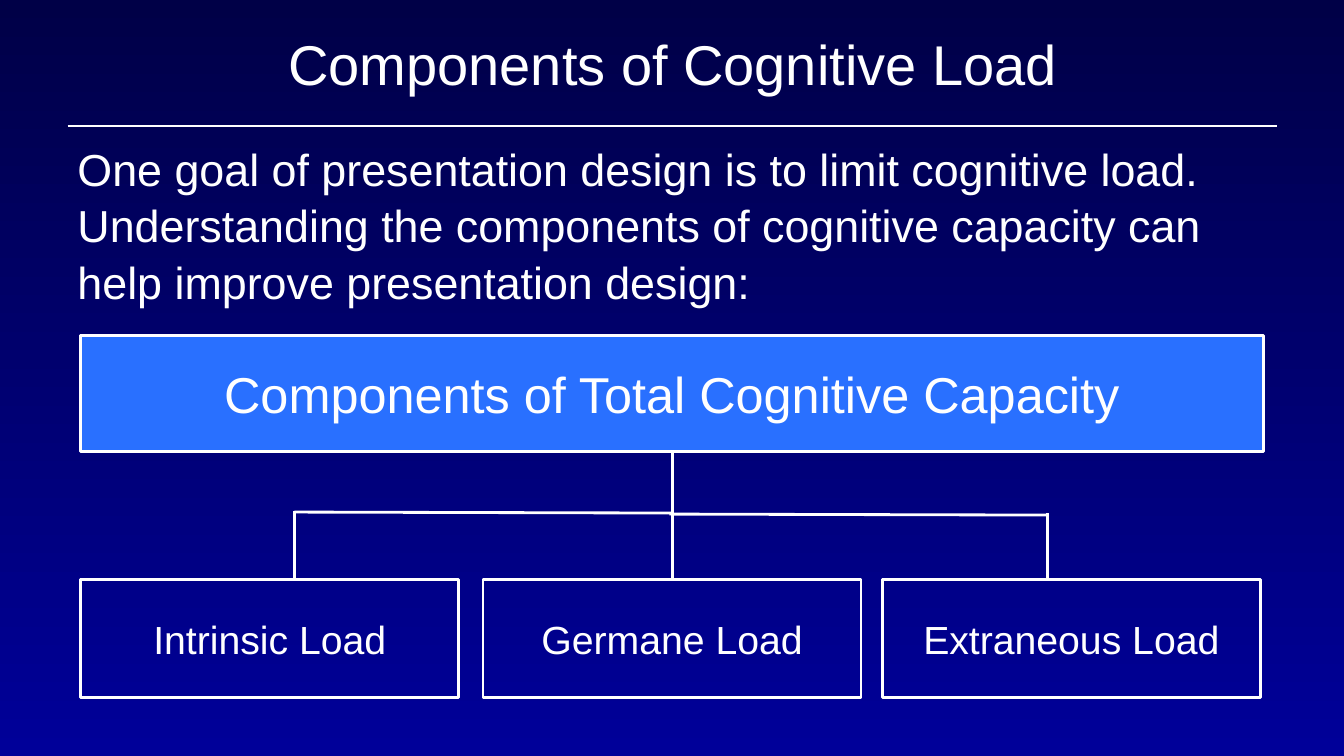
from pptx import Presentation
from pptx.dml.color import RGBColor
from pptx.enum.shapes import MSO_CONNECTOR, MSO_SHAPE
from pptx.enum.text import MSO_ANCHOR, PP_ALIGN
from pptx.oxml.ns import qn
from pptx.util import Inches, Pt
from lxml import etree

WHITE = RGBColor(0xFF, 0xFF, 0xFF)
BLUE = RGBColor(0x29, 0x70, 0xFF)
NAVY = RGBColor(0x00, 0x00, 0x47)
DEEP_BLUE = RGBColor(0x00, 0x00, 0x99)


def write_text(shape, text, size, alignment):
    frame = shape.text_frame
    frame.word_wrap = True
    frame.vertical_anchor = MSO_ANCHOR.MIDDLE
    paragraph = frame.paragraphs[0]
    paragraph.text = text
    paragraph.alignment = alignment
    paragraph.font.name = "Arial"
    paragraph.font.size = Pt(size)
    paragraph.font.color.rgb = WHITE
    return paragraph


presentation = Presentation()
presentation.slide_width = Inches(13.33)
presentation.slide_height = Inches(7.5)
slide = presentation.slides.add_slide(presentation.slide_layouts[5])

background = slide.background.fill
background.gradient()
background.gradient_angle = 270
for stop, color in zip(background.gradient_stops, (NAVY, DEEP_BLUE)):
    stop.color.rgb = color

title = slide.shapes.title
title.left, title.top = Inches(0.67), Inches(0)
title.width, title.height = Inches(12), Inches(1.25)
write_text(title, "Components of Cognitive Load", 40, PP_ALIGN.CENTER)

introduction = slide.shapes.add_textbox(Inches(0.67), Inches(1.42), Inches(12), Inches(1.6))
paragraph = write_text(
    introduction,
    "One goal of presentation design is to limit cognitive load. "
    "Understanding the components of cognitive capacity can "
    "help improve presentation design:",
    32,
    PP_ALIGN.LEFT,
)
paragraph.line_spacing = 1.05

boxes = [
    ("Components of Total Cognitive Capacity", 0.8, 3.33, 11.73, 1.15, 36, BLUE),
    ("Intrinsic Load", 0.8, 5.75, 3.75, 1.17, 28, None),
    ("Germane Load", 4.79, 5.75, 3.75, 1.17, 28, None),
    ("Extraneous Load", 8.75, 5.75, 3.75, 1.17, 28, None),
]
for text, left, top, width, height, size, fill_color in boxes:
    box = slide.shapes.add_shape(
        MSO_SHAPE.RECTANGLE, Inches(left), Inches(top), Inches(width), Inches(height)
    )
    box.shadow.inherit = False
    if fill_color is None:
        box.fill.background()
    else:
        box.fill.solid()
        box.fill.fore_color.rgb = fill_color
    box.line.color.rgb = WHITE
    box.line.width = Pt(2)
    write_text(box, text, size, PP_ALIGN.CENTER)

lines = [
    (0.67, 1.25, 12.67, 1.25),
    (6.67, 4.48, 6.67, 5.75),
    (2.92, 5.08, 6.67, 5.09),
    (6.64, 5.1, 10.39, 5.11),
    (2.92, 5.07, 2.92, 5.75),
    (10.39, 5.09, 10.39, 5.75),
]
for points in lines:
    connector = slide.shapes.add_connector(
        MSO_CONNECTOR.STRAIGHT, *[Inches(point) for point in points]
    )
    connector.line.color.rgb = WHITE
    connector.line.width = Pt(2)
    etree.SubElement(connector._element.spPr, qn("a:effectLst"))

presentation.save("out.pptx")
